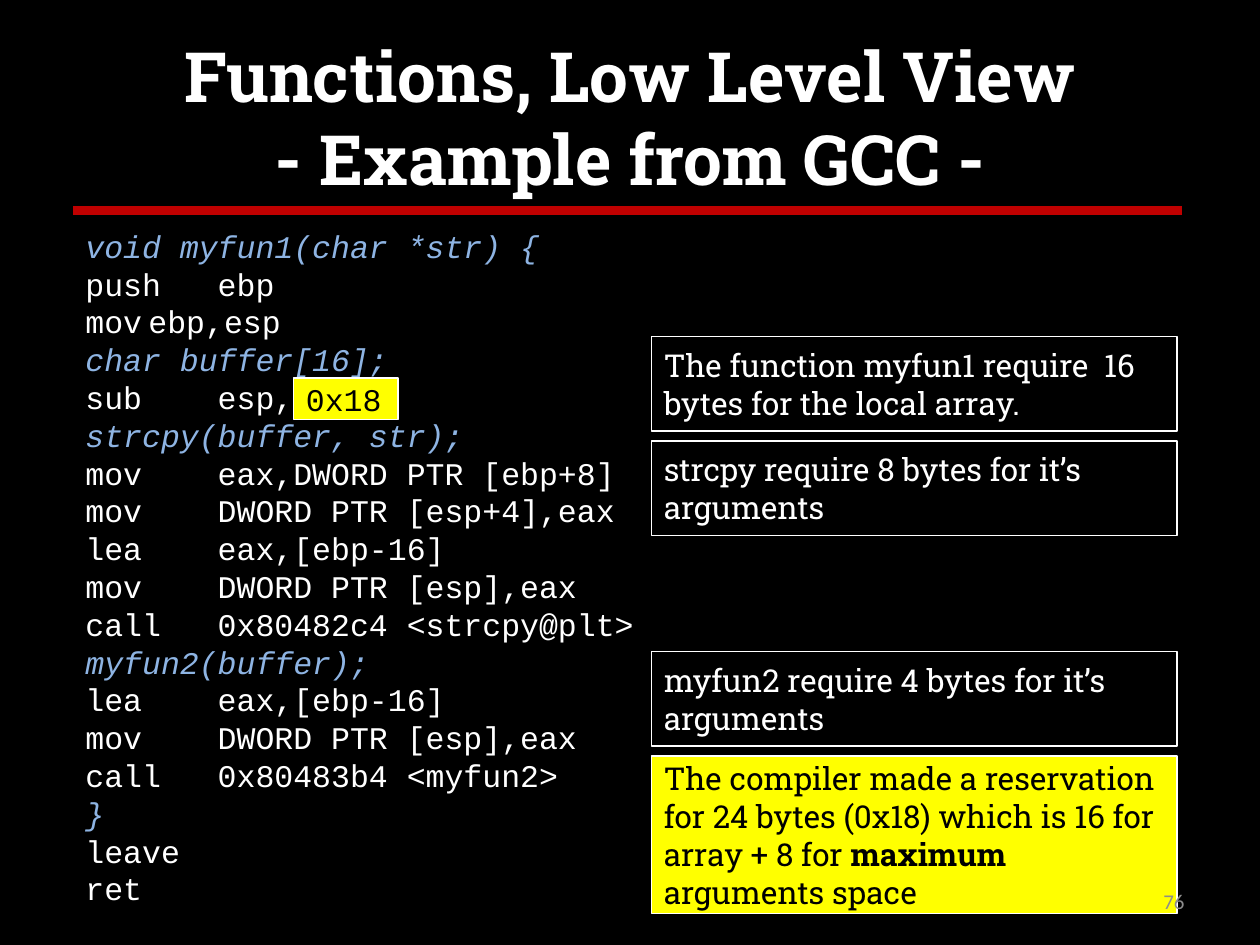
from dataclasses import dataclass

from lxml import etree
from pptx import Presentation
from pptx.dml.color import RGBColor
from pptx.enum import shapes, text
from pptx.oxml.ns import qn
from pptx.util import Inches, Pt

COLORS = {
    "background": "000000",
    "text": "FFFFFF",
    "source": "8EB4E3",
    "rule": "C00000",
    "highlight": "FFFF00",
    "dark": "000000",
    "number": "8C8C8C",
}
SERIF, MONO, SANS = "Roboto Slab", "Courier New", "Calibri"


@dataclass
class Block:
    """One C statement (may be empty) and the assembly it compiles to."""
    source: str
    assembly: list[str]


@dataclass
class Note:
    left: float
    top: float
    width: float
    height: float
    spans: list[str]  # every second span is bold
    highlighted: bool = False
    font: str = SERIF


BLOCKS = [
    Block("void myfun1(char *str) {", ["push   ebp", "mov\tebp,esp"]),
    Block("char buffer[16];", ["sub    esp,0x18"]),
    Block("strcpy(buffer, str);", [
        "mov    eax,DWORD PTR [ebp+8]",
        "mov    DWORD PTR [esp+4],eax",
        "lea    eax,[ebp-16]",
        "mov    DWORD PTR [esp],eax",
        "call   0x80482c4 <strcpy@plt>",
    ]),
    Block("myfun2(buffer);", [
        "lea    eax,[ebp-16]",
        "mov    DWORD PTR [esp],eax",
        "call   0x80483b4 <myfun2>",
    ]),
    Block("}", ["leave", "ret"]),
]

NOTE_LEFT, NOTE_WIDTH, NOTE_HEIGHT = 5.17, 4.17, 0.75
NOTES = [
    Note(NOTE_LEFT, 2.67, NOTE_WIDTH, NOTE_HEIGHT,
         ["The function myfun1 require  16 bytes for the local array."]),
    Note(NOTE_LEFT, 3.5, NOTE_WIDTH, NOTE_HEIGHT,
         ["strcpy require 8 bytes for it’s arguments"]),
    Note(NOTE_LEFT, 5.17, NOTE_WIDTH, NOTE_HEIGHT,
         ["myfun2 require 4 bytes for it’s arguments"]),
    Note(NOTE_LEFT, 6, NOTE_WIDTH, 1.25,
         ["The compiler made a reservation for 24 bytes (0x18) which is 16 for "
          "array + 8 for ", "maximum", " arguments space"], highlighted=True),
    Note(2.33, 3, 0.83, 0.33, ["0x18"], highlighted=True, font=MONO),
]


def color(name: str) -> RGBColor:
    return RGBColor.from_string(COLORS[name])


def style(span, font: str, size: float, shade: str,
          bold: bool = False, italic: bool = False) -> None:
    span.font.name = font
    span.font.size = Pt(size)
    span.font.bold = bold
    span.font.italic = italic
    span.font.color.rgb = color(shade)


def add_title(page, wording: str) -> None:
    title = page.shapes.title
    title.left, title.top = Inches(0.5), Inches(0.3)
    title.width, title.height = Inches(9), Inches(1.25)
    frame = title.text_frame
    frame.text = wording
    frame.auto_size = text.MSO_AUTO_SIZE.NONE
    frame.vertical_anchor = text.MSO_ANCHOR.MIDDLE
    para = frame.paragraphs[0]
    para.alignment = text.PP_ALIGN.CENTER
    for span in para.runs:
        style(span, SERIF, 39.6, "text", bold=True)


def add_rule(page) -> None:
    rule = page.shapes.add_connector(
        shapes.MSO_CONNECTOR.STRAIGHT,
        Inches(0.58), Inches(1.67), Inches(9.38), Inches(1.67))
    rule.line.color.rgb = color("rule")
    rule.line.width = Pt(5)
    etree.SubElement(rule._element.spPr, qn("a:effectLst"))


def add_listing(page, blocks: list[Block]) -> None:
    box = page.shapes.add_textbox(
        Inches(0.58), Inches(1.75), Inches(4.67), Inches(5.55))
    frame = box.text_frame
    frame.word_wrap = True
    frame.auto_size = text.MSO_AUTO_SIZE.SHAPE_TO_FIT_TEXT
    frame.text = "\n".join(
        line for block in blocks for line in [block.source, *block.assembly])
    is_source = [flag for block in blocks
                 for flag in [True] + [False] * len(block.assembly)]
    for para, source in zip(frame.paragraphs, is_source):
        for span in para.runs:
            style(span, MONO, 18, "source" if source else "text", italic=source)


def add_note(page, note: Note) -> None:
    box = page.shapes.add_shape(
        shapes.MSO_SHAPE.RECTANGLE, Inches(note.left), Inches(note.top),
        Inches(note.width), Inches(note.height))
    box.shadow.inherit = False
    box.line.color.rgb = color("text")
    box.line.width = Pt(1)
    if note.highlighted:
        box.fill.solid()
        box.fill.fore_color.rgb = color("highlight")
    else:
        box.fill.background()
    frame = box.text_frame
    frame.word_wrap = True
    frame.vertical_anchor = text.MSO_ANCHOR.MIDDLE
    para = frame.paragraphs[0]
    para.alignment = text.PP_ALIGN.LEFT
    for index, wording in enumerate(note.spans):
        span = para.add_run()
        span.text = wording
        style(span, note.font, 18, "dark" if note.highlighted else "text",
              bold=index % 2 == 1)


def add_page_number(page, number: int) -> None:
    box = page.shapes.add_textbox(
        Inches(7.17), Inches(6.95), Inches(2.33), Inches(0.4))
    frame = box.text_frame
    frame.word_wrap = True
    frame.vertical_anchor = text.MSO_ANCHOR.MIDDLE
    frame.text = str(number)
    para = frame.paragraphs[0]
    para.alignment = text.PP_ALIGN.RIGHT
    style(para.runs[0], SANS, 12, "number")


def main() -> None:
    deck = Presentation()
    deck.slide_width, deck.slide_height = Inches(10), Inches(7.5)
    page = deck.slides.add_slide(deck.slide_layouts[5])
    page.background.fill.solid()
    page.background.fill.fore_color.rgb = color("background")

    # Heading
    add_title(page, "Functions, Low Level View\v- Example from GCC -")
    add_rule(page)

    # Code and its explanations
    add_listing(page, BLOCKS)
    for note in NOTES:
        add_note(page, note)

    # Footer
    add_page_number(page, 76)
    deck.save("out.pptx")


if __name__ == "__main__":
    main()
